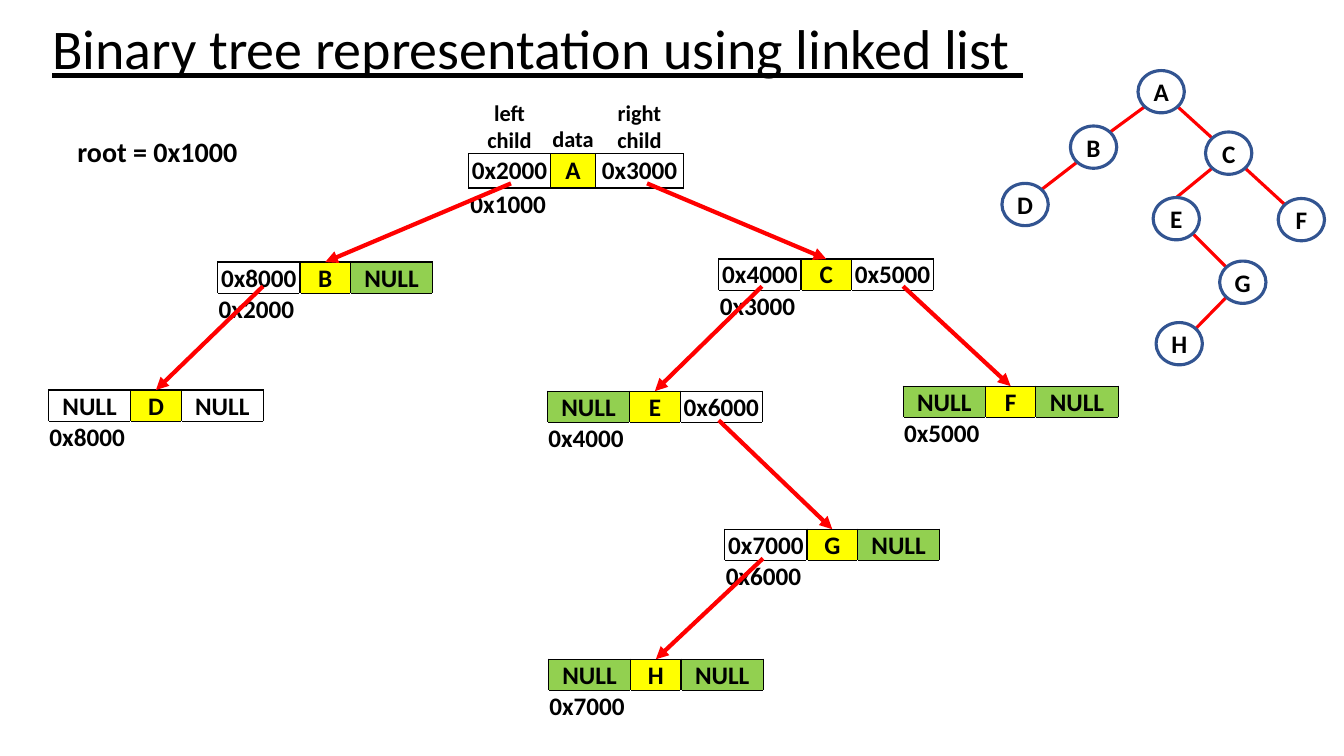
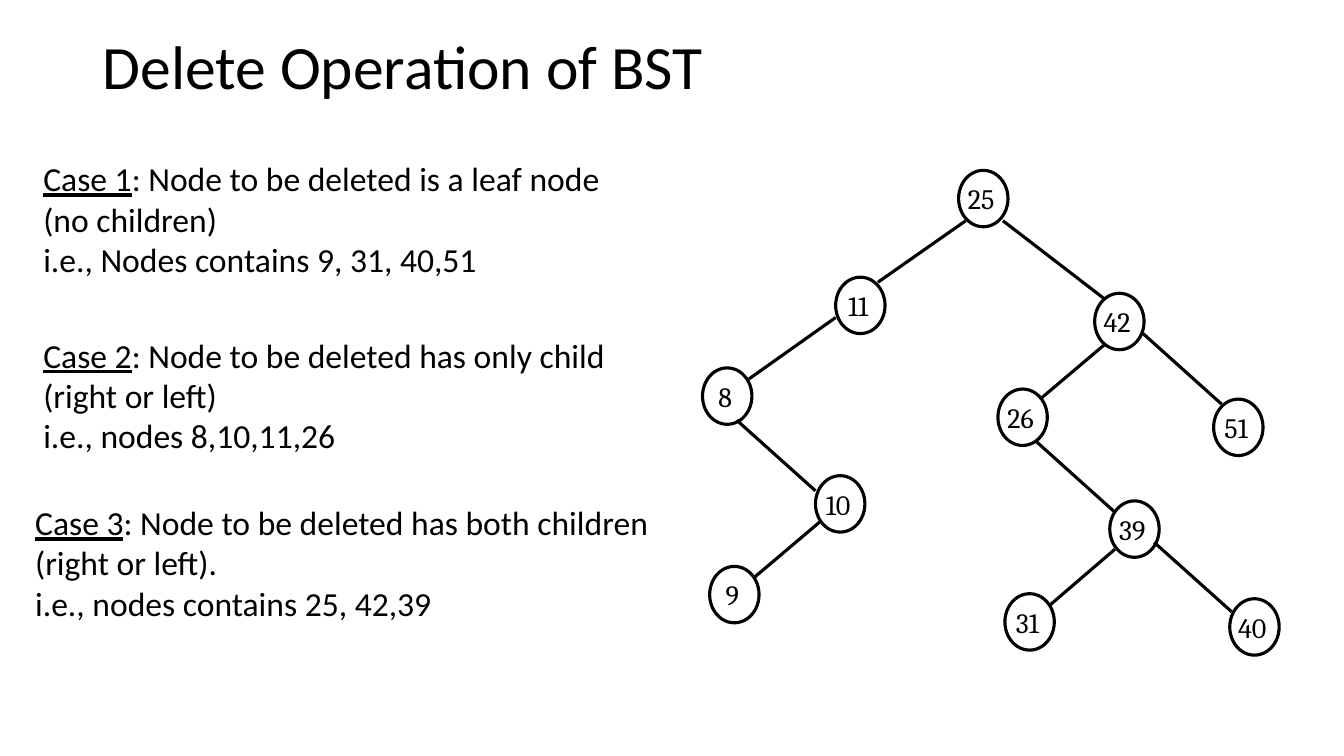
from lxml import etree
from pptx import Presentation
from pptx.dml.color import RGBColor
from pptx.enum import shapes, text
from pptx.oxml.ns import qn
from pptx.util import Pt

BLACK = RGBColor(0x00, 0x00, 0x00)
WHITE = RGBColor(0xFF, 0xFF, 0xFF)
RED = RGBColor(0xFF, 0x00, 0x00)
BLUE = RGBColor(0x32, 0x54, 0x91)
YELLOW = RGBColor(0xFF, 0xFF, 0x00)
GREEN = RGBColor(0x92, 0xD0, 0x50)

LEFT, CENTER = text.PP_ALIGN.LEFT, text.PP_ALIGN.CENTER
MIDDLE, BOTTOM = text.MSO_ANCHOR.MIDDLE, text.MSO_ANCHOR.BOTTOM

# Linked list: node -> left, top, left pointer, right pointer, own address
ROOT_HEADS = ["left child", "data", "right child"]
ROOT_CELLS = ["0x2000", "A", "0x3000"]
ROOT_AT = (334.8, 70.6)
ROOT_COLS, ROOT_ROWS = [58.3, 32.4, 62.6], [37.4, 24.5]
RECORDS = {
    "B": (155.5, 187.2, "0x8000", "NULL", "0x2000"),
    "C": (513.4, 185, "0x4000", "0x5000", "0x3000"),
    "D": (34.6, 278.6, "NULL", "NULL", "0x8000"),
    "E": (391, 279.4, "NULL", "0x6000", "0x4000"),
    "F": (645.1, 275.8, "NULL", "NULL", "0x5000"),
    "G": (517.7, 378, "0x7000", "NULL", "0x6000"),
    "H": (391.7, 470.9, "NULL", "NULL", "0x7000"),
}
UNSHADED = {"D"}
RECORD_COLS, RECORD_ROWS = [58.8, 36, 58.8], [22.3, 22.3]
# Pointer start -> child record
POINTERS = [
    (365, 131, "B"), (462.2, 131, "C"), (187.9, 204.5, "D"),
    (544.3, 204.5, "E"), (645.1, 204.5, "F"), (513.4, 300.2, "G"),
    (545, 398.9, "H"),
]

# Small letter tree
LETTER_SIZE = (33.1, 30.2)
LETTERS = {
    "A": (812.9, 50.4), "B": (764.6, 90), "C": (861.1, 94.3),
    "D": (715.7, 131), "E": (823.7, 141.1), "F": (913, 141.8),
    "G": (871.2, 186.5), "H": (825.8, 230.4),
}
LETTER_EDGES = ["AB", "AC", "BD", "CE", "CF", "EG", "GH"]

# Search tree
NUMBER_SIZE = (35.3, 40.3)
NUMBERS = {
    "25": (684.7, 121.7), "11": (596.9, 198), "8": (501.8, 262.8),
    "10": (582.5, 339.8), "9": (506.9, 404.6), "42": (781.9, 209.5),
    "51": (866.9, 285.1), "26": (712.8, 277.9), "39": (792.7, 357.8),
    "31": (717.8, 424.1), "40": (878.4, 427.7),
}
NUMBER_EDGES = [
    (689.8, 157.7, 627.1, 201.6), (596.9, 226.8, 535, 270.7),
    (716.4, 157.7, 788.4, 213.1), (789.8, 245.5, 743.8, 284.4),
    (816.5, 238.3, 872.6, 288.7), (740.2, 315.4, 796.3, 365.8),
    (526.3, 300.2, 582.5, 350.6), (796.3, 392.4, 750.2, 432),
    (824.4, 387.4, 879.8, 437), (585.4, 373, 538.6, 412.6),
]
CASES = [
    ((23.8, 109.4, 431.3, 94.3), "Case 1",
     ": Node to be deleted is a leaf node (no children)",
     "i.e., Nodes contains 9, 31, 40,51"),
    ((23.8, 235.4, 442.8, 94.3), "Case 2",
     ": Node to be deleted has only child (right or left)",
     "i.e., nodes 8,10,11,26"),
    ((18, 355, 461.5, 94.3), "Case 3",
     ": Node to be deleted has both children (right or left).",
     "i.e., nodes contains 25, 42,39"),
]


def points(values):
    return [Pt(value) for value in values]


def add_run(paragraph, words, size, bold=False, underline=False, font="Calibri"):
    run = paragraph.add_run()
    run.text = words
    run.font.name, run.font.size = font, Pt(size)
    run.font.bold, run.font.underline = bold, underline
    run.font.color.rgb = BLACK


def add_titled_slide(deck, words, box, size, underline=False):
    slide = deck.slides.add_slide(deck.slide_layouts[5])
    title = slide.shapes.title
    title.left, title.top, title.width, title.height = points(box)
    frame = title.text_frame
    frame.auto_size = text.MSO_AUTO_SIZE.NONE
    frame.vertical_anchor = MIDDLE
    heading = frame.paragraphs[0]
    heading.alignment, heading.line_spacing = LEFT, 0.9
    add_run(heading, words, size, underline=underline)
    return slide


def add_text_frame(slide, box, wrap=True):
    frame = slide.shapes.add_textbox(*points(box)).text_frame
    frame.word_wrap = wrap
    return frame


def add_line(slide, ends, color, width, arrow=False):
    line = slide.shapes.add_connector(shapes.MSO_CONNECTOR.STRAIGHT, *points(ends))
    line.line.color.rgb, line.line.width = color, Pt(width)
    properties = line._element.spPr
    if arrow:
        etree.SubElement(properties.find(qn("a:ln")), qn("a:tailEnd"), type="triangle")
    etree.SubElement(properties, qn("a:effectLst"))


def add_circles(slide, nodes, circle_size, color, right_inset=0, **style):
    for label, at in nodes.items():
        circle = slide.shapes.add_shape(
            shapes.MSO_SHAPE.OVAL, *points(at + circle_size))
        circle.shadow.inherit = False
        circle.fill.background()
        circle.line.color.rgb, circle.line.width = color, Pt(2.25)
        frame = circle.text_frame
        frame.margin_left = frame.margin_top = frame.margin_bottom = 0
        frame.margin_right = Pt(right_inset)
        frame.word_wrap, frame.vertical_anchor = False, MIDDLE
        frame.paragraphs[0].alignment = CENTER
        add_run(frame.paragraphs[0], label, **style)


def set_borders(cell, left, right, top, bottom):
    properties = cell._tc.get_or_add_tcPr()
    sides = zip(("lnL", "lnR", "lnT", "lnB"), (left, right, top, bottom))
    for place, (side, color) in enumerate(sides):
        border = etree.Element(qn("a:" + side), w=str(Pt(1)))
        fill = etree.SubElement(border, qn("a:solidFill"))
        etree.SubElement(fill, qn("a:srgbClr"), val=str(color))
        properties.insert(place, border)


def fill_cell(cell, words, borders, fill=None, size=18, align=CENTER, anchor=MIDDLE):
    cell.margin_left = cell.margin_right = cell.margin_top = Pt(0.72)
    cell.margin_bottom = 0
    cell.vertical_anchor = anchor
    if fill is None:
        cell.fill.background()
    else:
        cell.fill.solid()
        cell.fill.fore_color.rgb = fill
    set_borders(cell, *borders)
    paragraph = cell.text_frame.paragraphs[0]
    paragraph.alignment = align
    if words:
        add_run(paragraph, words, size, bold=True)
    else:
        paragraph.font.size = Pt(size)


def add_grid(slide, at, columns, rows):
    box = points((*at, sum(columns), sum(rows)))
    grid = slide.shapes.add_table(len(rows), len(columns), *box).table
    grid.first_row = grid.horz_banding = False
    for column, width in zip(grid.columns, columns):
        column.width = Pt(width)
    for row, height in zip(grid.rows, rows):
        row.height = Pt(height)
    return grid


def add_root(slide):
    grid = add_grid(slide, ROOT_AT, ROOT_COLS, ROOT_ROWS)
    for i, (head, value) in enumerate(zip(ROOT_HEADS, ROOT_CELLS)):
        fill_cell(grid.cell(0, i), head, (WHITE, WHITE, WHITE, BLACK),
                  size=16, anchor=BOTTOM)
        fill_cell(grid.cell(1, i), value, [BLACK] * 4, YELLOW if i == 1 else None)


def add_record(slide, name, left, top, left_child, right_child, address):
    grid = add_grid(slide, (left, top), RECORD_COLS, RECORD_ROWS)
    null_fill = None if name in UNSHADED else GREEN
    fills = {name: YELLOW, "NULL": null_fill}
    for i, value in enumerate((left_child, name, right_child)):
        fill_cell(grid.cell(0, i), value, [BLACK] * 4, fills.get(value))
        fill_cell(grid.cell(1, i), "" if i else address,
                  (WHITE, WHITE, BLACK, WHITE), align=LEFT, anchor=BOTTOM)


def letter_edge(parent, child):
    """Join the facing corners of two circles; a top centre for E."""
    (px, py), (cx, cy), (w, h) = LETTERS[parent], LETTERS[child], LETTER_SIZE
    near, far = 0.15, 0.85
    start, end = (near, far) if cx < px else (far, near)
    if child == "E":
        return px + w * start, py + h * far, cx + w / 2, cy
    return px + w * start, py + h * far, cx + w * end, cy + h * near


def build_linked_list(deck):
    slide = add_titled_slide(deck, "Binary tree representation using linked list ",
                             (30.2, 5.8, 828, 61.9), 40, underline=True)
    # Small tree
    for parent, child in LETTER_EDGES:
        add_line(slide, letter_edge(parent, child), RED, 2.25)
    add_circles(slide, LETTERS, LETTER_SIZE, BLUE, size=18, bold=True)
    # Memory records
    root_address = add_text_frame(slide, (329, 131, 77, 28.8))
    add_run(root_address.paragraphs[0], "0x1000", 18, bold=True)
    add_root(slide)
    for name, record in RECORDS.items():
        add_record(slide, name, *record)
    # Pointers end at the top centre of the child's data cell
    for x, y, child in POINTERS:
        left, top = RECORDS[child][:2]
        add_line(slide, (x, y, left + sum(RECORD_COLS) / 2, top), RED, 3, arrow=True)
    root_pointer = add_text_frame(slide, (48.2, 92.9, 134.6, 31.7), wrap=False)
    add_run(root_pointer.paragraphs[0], "root = 0x1000", 20, bold=True)


def build_delete_cases(deck):
    slide = add_titled_slide(deck, "Delete Operation of BST",
                             (66.2, 17.3, 828, 64.1), 44)
    # Cases
    for box, name, rule, example in CASES:
        frame = add_text_frame(slide, box)
        add_run(frame.paragraphs[0], name, 24, underline=True)
        add_run(frame.paragraphs[0], rule, 24)
        add_run(frame.add_paragraph(), example, 24)
    # Search tree
    for ends in NUMBER_EDGES:
        add_line(slide, ends, BLACK, 2.25)
    add_circles(slide, NUMBERS, NUMBER_SIZE, BLACK, right_inset=3,
                size=20, font="Cambria")


def main():
    deck = Presentation()
    deck.slide_width, deck.slide_height = Pt(960), Pt(540)
    build_linked_list(deck)
    build_delete_cases(deck)
    deck.save("out.pptx")


if __name__ == "__main__":
    main()
